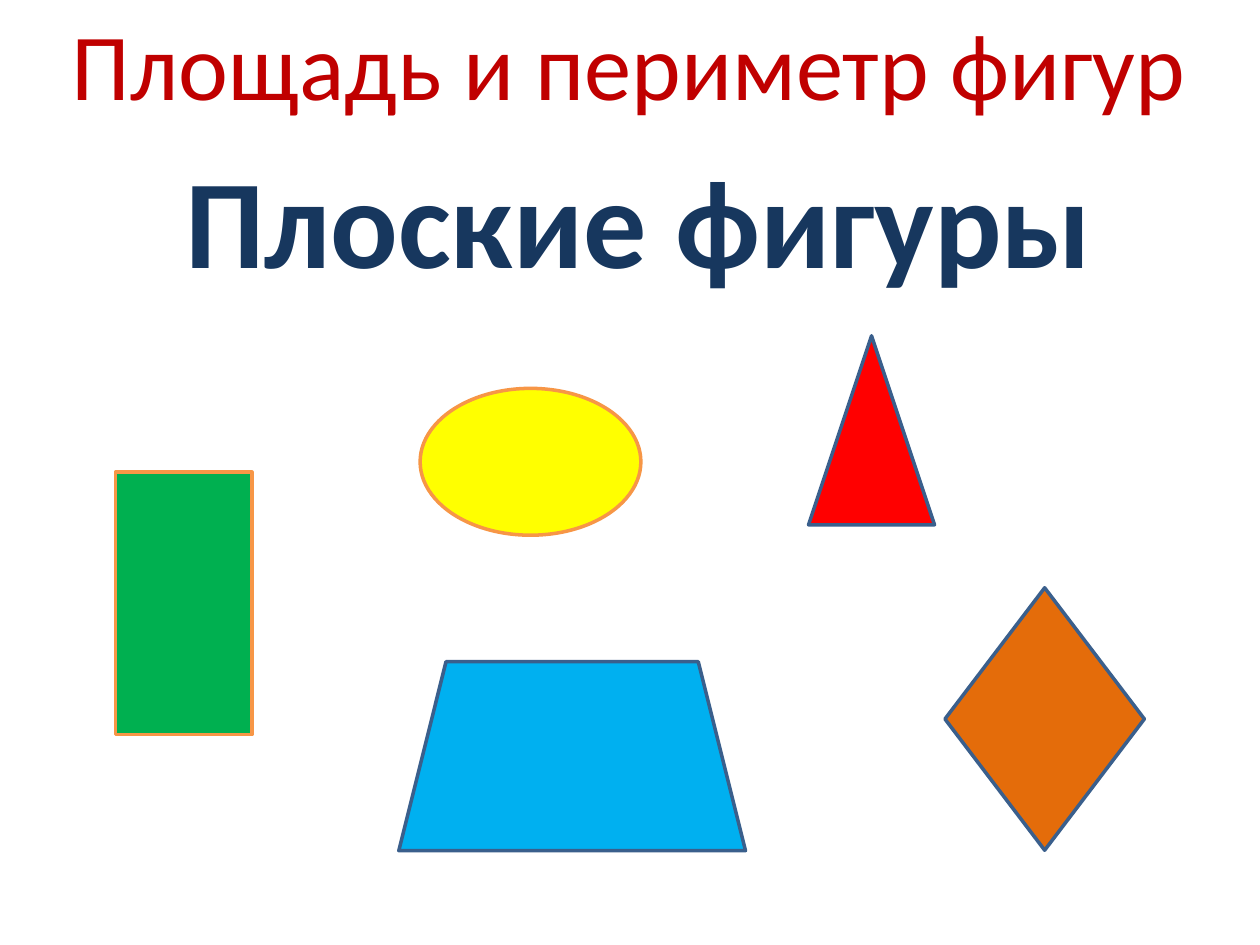
import pptx
import pptx.dml.color
import pptx.enum.shapes
import pptx.enum.text
import pptx.util

Cm = pptx.util.Cm
Pt = pptx.util.Pt
RGBColor = pptx.dml.color.RGBColor
MSO_SHAPE = pptx.enum.shapes.MSO_SHAPE

DARK_RED = RGBColor(0xC0, 0x00, 0x00)
NAVY = RGBColor(0x17, 0x37, 0x5E)
GREEN = RGBColor(0x00, 0xB0, 0x50)
YELLOW = RGBColor(0xFF, 0xFF, 0x00)
RED = RGBColor(0xFF, 0x00, 0x00)
SKY = RGBColor(0x00, 0xB0, 0xF0)
RUST = RGBColor(0xE4, 0x6C, 0x0A)
ORANGE_EDGE = RGBColor(0xF7, 0x96, 0x46)
BLUE_EDGE = RGBColor(0x3A, 0x5F, 0x8C)

FIGURES = [
    (MSO_SHAPE.RECTANGLE, 0, 2.75, 2.75, 5.29, GREEN, ORANGE_EDGE),
    (MSO_SHAPE.OVAL, 6.14, 1.06, 4.45, 2.96, YELLOW, ORANGE_EDGE),
    (MSO_SHAPE.ISOSCELES_TRIANGLE, 13.97, 0, 2.54, 3.81, RED, BLUE_EDGE),
    (MSO_SHAPE.TRAPEZOID, 5.71, 6.57, 6.99, 3.81, SKY, BLUE_EDGE),
    (MSO_SHAPE.DIAMOND, 16.72, 5.08, 4.02, 5.29, RUST, BLUE_EDGE),
]


def fill_heading(heading, box, wording, size, color, bold=False):
    heading.left, heading.top, heading.width, heading.height = map(Cm, box)
    frame = heading.text_frame
    frame.word_wrap = False
    frame.auto_size = pptx.enum.text.MSO_AUTO_SIZE.SHAPE_TO_FIT_TEXT
    frame.vertical_anchor = pptx.enum.text.MSO_ANCHOR.TOP
    line = frame.paragraphs[0]
    line.alignment = pptx.enum.text.PP_ALIGN.CENTER
    line.space_before = Pt(0)
    words = line.add_run()
    words.text = wording
    words.font.name = "Calibri"
    words.font.size = Pt(size)
    words.font.bold = bold
    words.font.color.rgb = color


def draw_figures(slide, left, top):
    for kind, x, y, width, height, color, edge in FIGURES:
        figure = slide.shapes.add_shape(
            kind, Cm(left + x), Cm(top + y), Cm(width), Cm(height))
        figure.shadow.inherit = False
        figure.fill.solid()
        figure.fill.fore_color.rgb = color
        figure.line.color.rgb = edge
        figure.line.width = Pt(2)


def main():
    deck = pptx.Presentation()
    deck.slide_width, deck.slide_height = Cm(25.4), Cm(19.05)
    slide = deck.slides.add_slide(deck.slide_layouts[0])
    topic, subject = slide.placeholders
    fill_heading(topic, (1.07, 0, 23.22, 2.57),
                 "Площадь и периметр фигур", 54, DARK_RED)
    fill_heading(subject, (3.38, 2.74, 19, 3.33),
                 "Плоские фигуры", 72, NAVY, bold=True)
    draw_figures(slide, 2.33, 6.77)
    deck.save("out.pptx")


if __name__ == "__main__":
    main()
